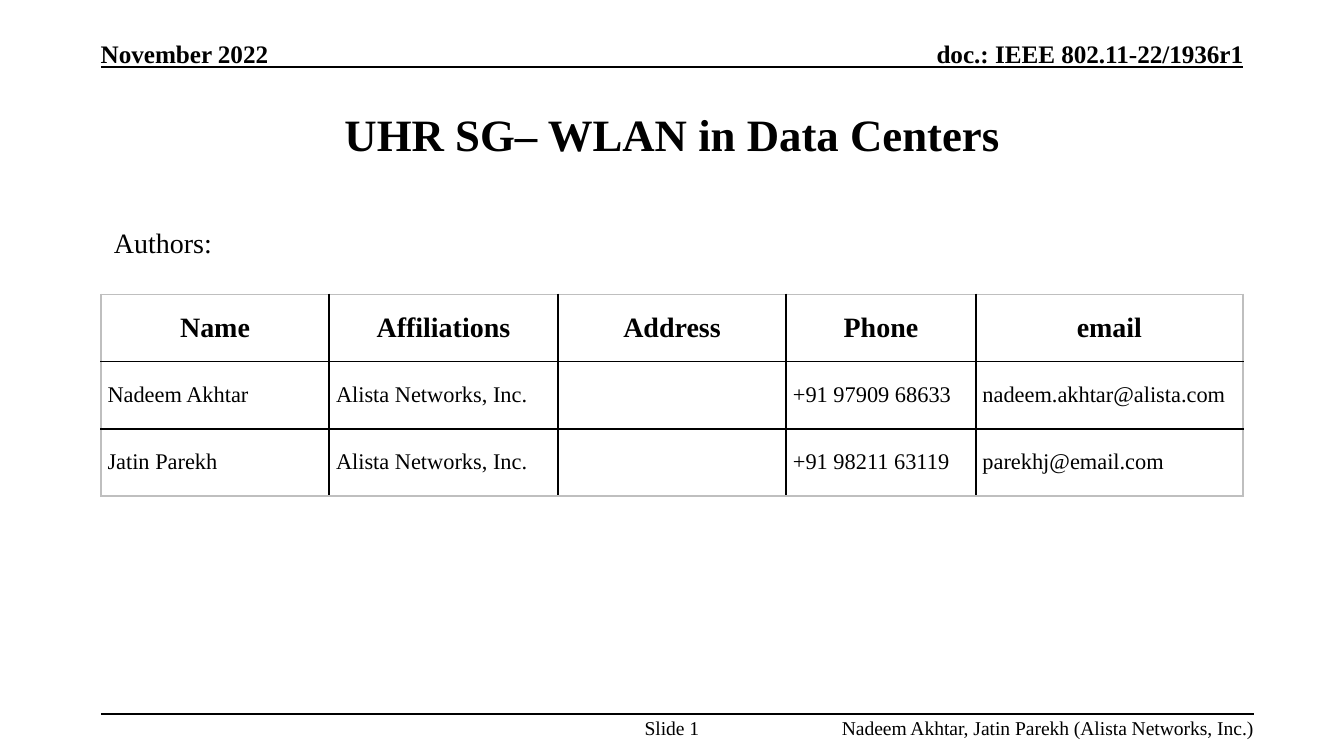
from lxml import etree
from pptx import Presentation
from pptx.dml.color import RGBColor
from pptx.enum.shapes import MSO_CONNECTOR
from pptx.enum.text import MSO_ANCHOR, PP_ALIGN
from pptx.oxml.ns import qn
from pptx.util import Inches, Pt

LEFT, MID, RIGHT = PP_ALIGN.LEFT, PP_ALIGN.CENTER, PP_ALIGN.RIGHT
TOP, CENTER, BOTTOM = MSO_ANCHOR.TOP, MSO_ANCHOR.MIDDLE, MSO_ANCHOR.BOTTOM
STRAIGHT = MSO_CONNECTOR.STRAIGHT
FONT = "Times New Roman"
HEX = {"ink": "000000", "edge": "BFBFBF"}
COLS = [1.7, 1.7, 1.7, 1.41, 1.99]
ROW = 0.5
FIRM = "Alista Networks, Inc."
ROWS = [
    ["Name", "Affiliations", "Address", "Phone", "email"],
    ["Nadeem Akhtar", FIRM, "", "+91 97909 68633", "nadeem.akhtar@alista.com"],
    ["Jatin Parekh", FIRM, "", "+91 98211 63119", "parekhj@email.com"],
]


def style(para, size, bold=False, align=LEFT):
    """Format a paragraph and its runs."""
    para.alignment = align
    for item in [para, *para.runs]:
        item.font.name = FONT
        item.font.size = Pt(size)
        item.font.bold = bold
        item.font.color.rgb = RGBColor.from_string(HEX["ink"])


def label(slide, box, text, size, bold=False, align=LEFT, anchor=BOTTOM, pad=(0, 0)):
    """Place a text box with one styled paragraph."""
    frame = slide.shapes.add_textbox(*map(Inches, box)).text_frame
    frame.word_wrap = True
    frame.vertical_anchor = anchor
    frame.margin_left = frame.margin_right = Inches(pad[0])
    frame.margin_top = frame.margin_bottom = Inches(pad[1])
    frame.text = text
    style(frame.paragraphs[0], size, bold, align)


def rule(slide, left, top, width):
    """Draw a horizontal black line."""
    ends = map(Inches, (left, top, left + width, top))
    line = slide.shapes.add_connector(STRAIGHT, *ends)
    line.line.color.rgb = RGBColor.from_string(HEX["ink"])
    line.line.width = Pt(1)
    etree.SubElement(line._element.spPr, qn("a:effectLst"))


def header(slide, left, top, width, height):
    """Place the date and document number above a line."""
    half = 3.83
    label(slide, (left, top, half, height), "November 2022", 13.5, True)
    label(slide, (left + width - half, top, half, height),
          "doc.: IEEE 802.11-22/1936r1", 13.5, True, RIGHT)
    rule(slide, left, top + 0.21, width)


def footer(slide, left, top, width, height):
    """Place the slide number and authors below a line."""
    rule(slide, left, top, width)
    label(slide, (left + 3.18, top, 2.14, height), "Slide 1", 10.5, align=MID)
    label(slide, (left + width - 3.12, top, 3.12, height),
          f"Nadeem Akhtar, Jatin Parekh ({FIRM})", 10.5, align=RIGHT)


def border(cell, sides):
    """Draw the four sides of a cell, grey on the outer edge."""
    props = cell._tc.get_or_add_tcPr()
    for side, outer in sides.items():
        line = etree.SubElement(props, qn(f"a:ln{side}"), w=str(Pt(1)))
        fill = etree.SubElement(line, qn("a:solidFill"))
        etree.SubElement(fill, qn("a:srgbClr"), val=HEX["edge" if outer else "ink"])


def authors(slide, left, top, width):
    """Place the table of authors."""
    count, wide = len(ROWS), len(COLS)
    box = map(Inches, (left, top, width, ROW * count))
    table = slide.shapes.add_table(count, wide, *box).table
    table.horz_banding = False
    for col, size in zip(table.columns, COLS):
        col.width = Inches(size)
    for r, row in enumerate(ROWS):
        table.rows[r].height = Inches(ROW)
        for c, text in enumerate(row):
            cell = table.cell(r, c)
            cell.text = text
            cell.vertical_anchor = CENTER
            cell.margin_left = cell.margin_right = Inches(0.05)
            cell.margin_top = cell.margin_bottom = 0
            border(cell, {"L": c == 0, "R": c == wide - 1,
                          "T": r == 0, "B": r == count - 1})
            cell.fill.background()
            head = r == 0
            style(cell.text_frame.paragraphs[0], 15 if head else 12, head,
                  MID if head else LEFT)


def build():
    """Build and save the title slide."""
    deck = Presentation()
    deck.slide_width = Inches(10)
    deck.slide_height = deck.slide_width * 9 // 16
    slide = deck.slides.add_slide(deck.slide_layouts[6])
    left, width, pad = 0.75, 8.5, (0.1, 0.05)
    header(slide, left, 0.29, width, 0.22)
    footer(slide, left, 5.31, 8.58, 0.19)
    label(slide, (left, 0.56, width, 0.87), "UHR SG– WLAN in Data Centers",
          24, True, MID, CENTER, pad)
    label(slide, (left, 1.63, width, 3.37), "Authors:", 15, anchor=TOP, pad=pad)
    authors(slide, left, 2.19, width)
    deck.save("out.pptx")


if __name__ == "__main__":
    build()
